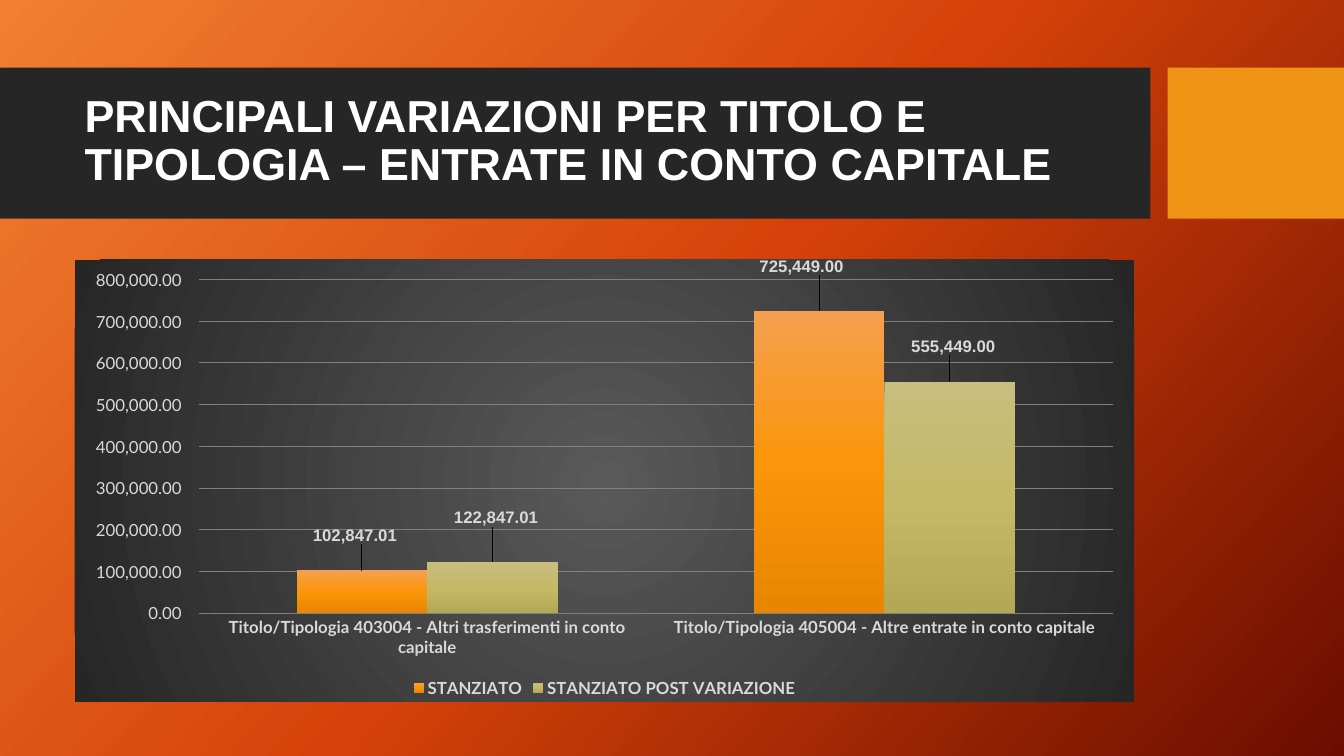
from lxml import etree
from pptx import Presentation
from pptx.chart.data import CategoryChartData as Data
from pptx.dml.color import RGBColor as Rgb
from pptx.enum.chart import XL_CHART_TYPE as Kind
from pptx.enum.chart import XL_LABEL_POSITION as Spot
from pptx.enum.chart import XL_LEGEND_POSITION as Side
from pptx.enum.chart import XL_TICK_MARK as Tick
from pptx.enum.shapes import MSO_SHAPE as Form
from pptx.enum.text import MSO_ANCHOR as Anchor
from pptx.oxml import parse_xml
from pptx.oxml.ns import nsdecls, qn
from pptx.util import Inches, Pt

COLORS = {"dark": "262626", "amber": "F09415", "white": "FFFFFF",
          "pale": "D9D9D9", "grid": "808080"}
BACK = ["F18031", "D54209", "6A0D00"]
PANEL = ["595959", "262626"]
BARS = [["F4A050", "FB960A", "E88600"], ["C8BE7F", "C5B867", "B4A756"]]
NUMBER = r"#,##0.00\ _€"
CATS = ["Titolo/Tipologia 403004 - Altri trasferimenti in conto capitale",
        "Titolo/Tipologia 405004 - Altre entrate in conto capitale"]
SERIES = [("STANZIATO", (102847.01, 725449)),
          ("STANZIATO POST VARIAZIONE", (122847.01, 555449))]
SHIFTS = [[(0, -0.05), (-0.01, -0.07)], [(0.01, -0.07), (0.01, -0.05)]]
PLOT = {"x": 0.117, "y": 0.045, "w": 0.863, "h": 0.755}


class Deck:
    """Holds the style and the current slide, and draws each kind of element."""

    def __init__(self):
        self.prs = Presentation()
        self.prs.slide_width, self.prs.slide_height = Inches(13.33), Inches(7.5)
        self.slide = self.prs.slides.add_slide(self.prs.slide_layouts[6])

    def color(self, name):
        return Rgb.from_string(COLORS[name])

    def font(self, font, size, name="Lato", color="pale", bold=False):
        font.size, font.name, font.bold = Pt(size), name, bold
        font.color.rgb = self.color(color)

    def blend(self, hues, angle=None):
        step = 100000 // (len(hues) - 1)
        stops = "".join(f'<a:gs pos="{i * step}"><a:srgbClr val="{hue}"/></a:gs>'
                        for i, hue in enumerate(hues))
        if angle is None:
            way = ('<a:path path="circle"><a:fillToRect l="50000" t="50000" '
                   'r="50000" b="50000"/></a:path>')
        else:
            way = f'<a:lin ang="{angle * 60000}" scaled="0"/>'
        return parse_xml(f'<a:gradFill {nsdecls("a")} rotWithShape="1">'
                         f'<a:gsLst>{stops}</a:gsLst>{way}</a:gradFill>')

    def refill(self, fill, root, hues, angle):
        fill.solid()
        solid = next(root.iter(qn("a:solidFill")))
        solid.getparent().replace(solid, self.blend(hues, angle))

    def back(self, hues, angle):
        self.refill(self.slide.background.fill, self.slide.element, hues, angle)

    def block(self, box, color):
        shape = self.slide.shapes.add_shape(Form.RECTANGLE, *map(Inches, box))
        shape.shadow.inherit = False
        shape.fill.solid()
        shape.fill.fore_color.rgb = self.color(color)
        shape.line.fill.background()

    def title(self, box, text):
        frame = self.slide.shapes.add_textbox(*map(Inches, box)).text_frame
        frame.word_wrap = True
        frame.vertical_anchor = Anchor.MIDDLE
        frame.text = text
        para = frame.paragraphs[0]
        para.line_spacing = 0.9
        self.font(para.runs[0].font, 32, "Arial", "white", True)

    def layout(self, places, inner=False):
        node = etree.Element(qn("c:layout"))
        manual = etree.SubElement(node, qn("c:manualLayout"))
        if inner:
            etree.SubElement(manual, qn("c:layoutTarget"), val="inner")
            for key in "xy":
                etree.SubElement(manual, qn(f"c:{key}Mode"), val="edge")
        for key, val in places.items():
            etree.SubElement(manual, qn(f"c:{key}"), val=str(val))
        return node

    def axis(self, axis, bold):
        axis.major_tick_mark = axis.minor_tick_mark = Tick.NONE
        axis.format.line.fill.background()
        self.font(axis.tick_labels.font, 12, bold=bold)

    def labels(self, series, shifts):
        labels = series.data_labels
        labels.show_value = True
        labels.number_format, labels.number_format_is_linked = NUMBER, False
        labels.position = Spot.OUTSIDE_END
        self.font(labels.font, 12, "Arial", bold=True)
        for i in range(len(shifts)):
            label = series.points[i].data_label
            self.font(label.font, 12, "Arial", bold=True)
            label.position = Spot.OUTSIDE_END
        for node, shift in zip(series._element.iter(qn("c:dLbl")), shifts):
            form = etree.Element(qn("c:numFmt"), formatCode=NUMBER, sourceLinked="0")
            node.insert(1, self.layout(dict(zip("xy", shift))))
            node.insert(2, form)

    def chart(self, box):
        data = Data(number_format=NUMBER)
        data.categories = CATS
        for name, vals in SERIES:
            data.add_series(name, vals)
        chart = self.slide.shapes.add_chart(
            Kind.COLUMN_CLUSTERED, *map(Inches, box), data).chart
        self.font(chart.font, 10, color="white")
        chart.has_title = False
        chart.has_legend = True
        chart.legend.position = Side.BOTTOM
        chart.legend.include_in_layout = False
        self.font(chart.legend.font, 12, bold=True)
        self.axis(chart.category_axis, True)
        scale = chart.value_axis
        self.axis(scale, False)
        scale.minimum_scale, scale.maximum_scale = 0, 800000
        scale.major_unit = 100000
        scale.tick_labels.number_format = NUMBER
        scale.tick_labels.number_format_is_linked = False
        grid = scale.major_gridlines.format.line
        grid.color.rgb, grid.width = self.color("grid"), Pt(0.75)
        plot = chart.plots[0]
        plot.gap_width, plot.overlap, plot.vary_by_categories = 150, 0, False
        for series, hues, shifts in zip(plot.series, BARS, SHIFTS):
            self.refill(series.format.fill, series._element, hues, 90)
            self.labels(series, shifts)
        root = chart._chartSpace
        area = root.find(qn("c:chart")).find(qn("c:plotArea"))
        for old in area.findall(qn("c:layout")):
            area.remove(old)
        area.insert(0, self.layout(PLOT, True))
        panel = etree.Element(qn("c:spPr"))
        panel.append(self.blend(PANEL))
        line = etree.SubElement(panel, qn("a:ln"))
        etree.SubElement(line, qn("a:noFill"))
        root.find(qn("c:chart")).addnext(panel)


def main():
    deck = Deck()
    deck.back(BACK, 42)
    deck.block((0, 0.67, 11.41, 1.5), "dark")
    deck.block((11.58, 0.67, 1.75, 1.5), "amber")
    deck.title((0.74, 0.82, 10.51, 1.18),
               "PRINCIPALI VARIAZIONI PER TITOLO E TIPOLOGIA – "
               "ENTRATE IN CONTO CAPITALE")
    deck.chart((0.74, 2.56, 10.51, 4.4))
    deck.prs.save("out.pptx")


if __name__ == "__main__":
    main()
